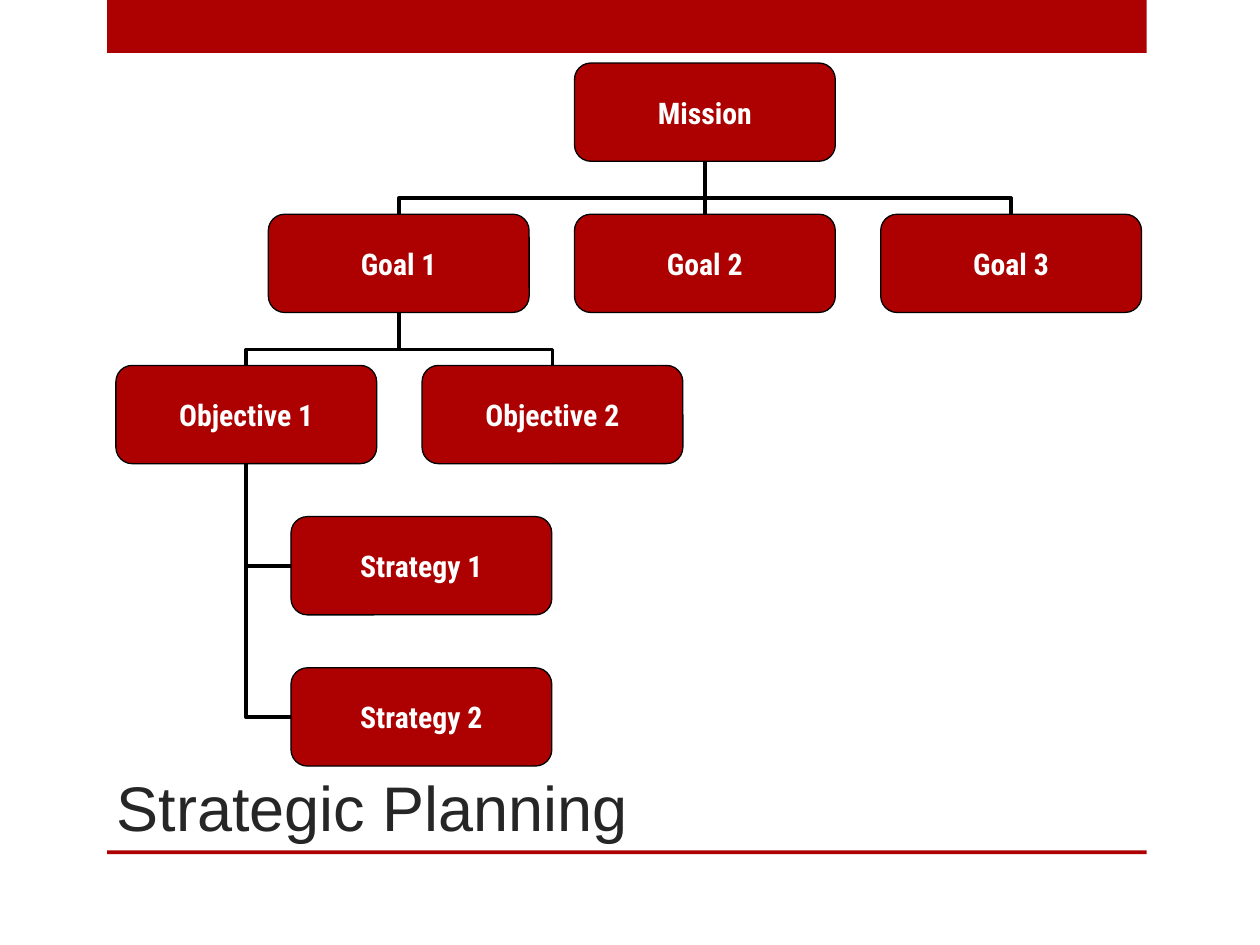
"""Build a strategic planning slide with a mission, goals, objectives and strategies tree."""
from lxml.etree import SubElement
from pptx import Presentation
from pptx.dml.color import RGBColor
from pptx.enum.shapes import MSO_CONNECTOR as Link, MSO_SHAPE as Shape
from pptx.enum.text import MSO_ANCHOR as Anchor, PP_ALIGN as Align
from pptx.oxml.ns import qn
from pptx.util import Inches, Pt

COLORS = {"red": "AD0101", "black": "000000", "white": "FFFFFF", "title": "262626"}
BOX_WIDTH, BOX_HEIGHT = 2.07, 0.78
FIRST_TOP, ROW_STEP = 0.5, 1.2
ROW_GAP = ROW_STEP - BOX_HEIGHT
TRUNK_X = 1.95

NODES = {
    "Mission": (4.56, 0),
    "Goal 1": (2.13, 1),
    "Goal 2": (4.56, 1),
    "Goal 3": (6.99, 1),
    "Objective 1": (0.92, 2),
    "Objective 2": (3.35, 2),
    "Strategy 1": (2.31, 3),
    "Strategy 2": (2.31, 4),
}
BRANCHES = [
    ("Objective 2", "Goal 1"),
    ("Objective 1", "Goal 1"),
    ("Goal 3", "Mission"),
    ("Goal 2", "Mission"),
    ("Goal 1", "Mission"),
]


def color(name):
    return RGBColor.from_string(COLORS[name])


def row_top(row):
    return FIRST_TOP + row * ROW_STEP


def set_text(shape, text, font_color, font_format, frame_format):
    frame = shape.text_frame
    for name, value in frame_format.items():
        setattr(frame, name, value)
    para = frame.paragraphs[0]
    span = para.add_run()
    span.text = text
    for name, value in font_format.items():
        setattr(span.font, name, value)
    span.font.color.rgb = color(font_color)
    return para


def add_filled(page, kind, left, top, width, height):
    shape = page.shapes.add_shape(kind, *map(Inches, (left, top, width, height)))
    shape.shadow.inherit = False
    shape.fill.solid()
    shape.fill.fore_color.rgb = color("red")
    shape.line.fill.background()
    return shape


def add_node(page, text, left, row):
    box = add_filled(page, Shape.ROUNDED_RECTANGLE, left, row_top(row), BOX_WIDTH, BOX_HEIGHT)
    box.line.color.rgb = color("black")
    box.line.width = Pt(0.75)
    margins = {f"margin_{side}": 0 for side in ("left", "top", "right", "bottom")}
    para = set_text(
        box, text, "white",
        {"name": "Roboto Condensed", "size": Pt(17), "bold": True},
        {"word_wrap": False, "vertical_anchor": Anchor.MIDDLE, **margins},
    )
    para.alignment = Align.CENTER


def add_link(page, kind, begin, end, degrees=0):
    link = page.shapes.add_connector(kind, *map(Inches, (*begin, *end)))
    link.line.color.rgb = color("black")
    link.line.width = Pt(2.25)
    properties = link._element.spPr
    SubElement(properties, qn("a:effectLst"))
    if degrees:
        properties.find(qn("a:xfrm")).set("rot", str(degrees * 60000))
    return properties.find(qn("a:prstGeom"))


def add_branch(page, child, parent):
    child_left, child_row = NODES[child]
    child_x = child_left + BOX_WIDTH / 2
    parent_x = NODES[parent][0] + BOX_WIDTH / 2
    bottom = row_top(child_row)
    top = bottom - ROW_GAP
    span = abs(child_x - parent_x)
    if not span:
        add_link(page, Link.STRAIGHT, (child_x, bottom), (parent_x, top))
        return
    middle_x, middle_y = (child_x + parent_x) / 2, (top + bottom) / 2
    reach = ROW_GAP / 2 if child_x > parent_x else -ROW_GAP / 2
    geometry = add_link(
        page, Link.ELBOW,
        (middle_x + reach, middle_y - span / 2),
        (middle_x - reach, middle_y + span / 2),
        90 if child_x > parent_x else 270,
    )
    guides = geometry.find(qn("a:avLst"))
    if guides is None:
        guides = SubElement(geometry, qn("a:avLst"))
    SubElement(guides, qn("a:gd"), name="adj1", fmla="val 30000")


def add_trunk(page, child):
    left, row = NODES[child]
    top = row_top(2) + BOX_HEIGHT
    middle = row_top(row) + BOX_HEIGHT / 2
    geometry = add_link(page, Link.ELBOW, (TRUNK_X, top), (left, middle), 180)
    geometry.set("prst", "bentConnector2")


def add_title(page, text):
    box = page.shapes.add_textbox(*map(Inches, (0.83, 6, 8.25, 0.75)))
    set_text(
        box, text, "title",
        {"name": "Arial", "size": Pt(36)},
        {"word_wrap": True, "vertical_anchor": Anchor.BOTTOM},
    )


def main():
    deck = Presentation()
    deck.slide_width, deck.slide_height = Inches(10), Inches(7.5)
    page = deck.slides.add_slide(deck.slide_layouts[6])
    for top, height in ((0, 0.42), (6.75, 0.03)):
        add_filled(page, Shape.RECTANGLE, 0.85, top, 8.25, height)
    add_title(page, "Strategic Planning")
    for child in ("Strategy 2", "Strategy 1"):
        add_trunk(page, child)
    for child, parent in BRANCHES:
        add_branch(page, child, parent)
    for text, (left, row) in NODES.items():
        add_node(page, text, left, row)
    deck.save("out.pptx")


if __name__ == "__main__":
    main()
